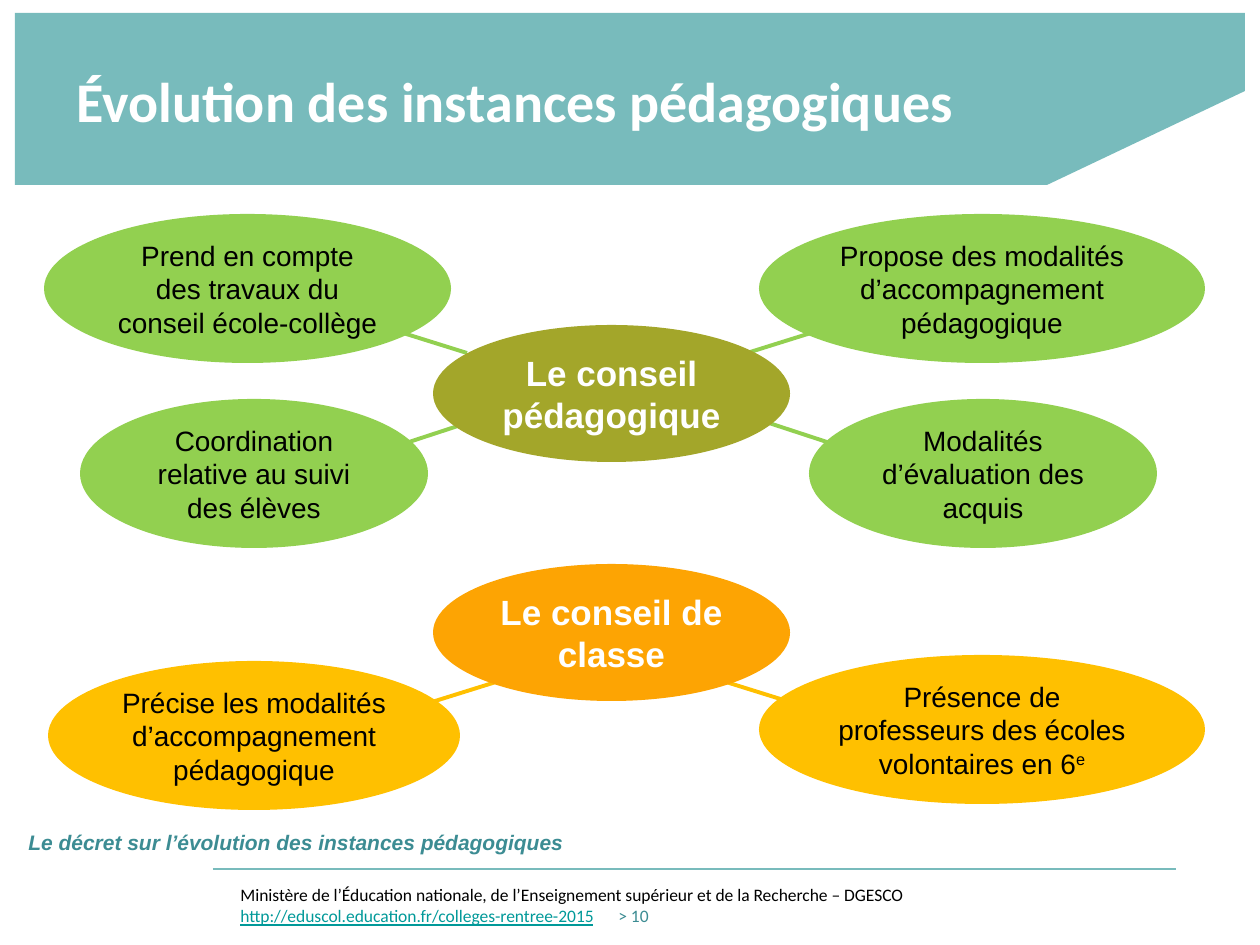
from lxml.etree import SubElement
from pptx import Presentation
from pptx.dml.color import RGBColor
from pptx.enum.shapes import MSO_CONNECTOR, MSO_SHAPE
from pptx.enum.text import MSO_ANCHOR, PP_ALIGN
from pptx.oxml.ns import qn
from pptx.util import Emu, Pt

SCALE = 914400 / 126


def px(*lengths):
    return [Emu(round(length * SCALE)) for length in lengths]


def color(value):
    return RGBColor.from_string(value)


presentation = Presentation()
presentation.slide_width, presentation.slide_height = px(1260, 945)
slide = presentation.slides.add_slide(presentation.slide_layouts[6])
shapes = slide.shapes

builder = shapes.build_freeform(1245, 13, scale=SCALE)
builder.add_line_segments([(15, 13), (15, 185), (1047, 185), (1245, 91)], close=True)
banner = builder.convert_to_shape()
banner.shadow.inherit = False
banner.fill.solid()
banner.fill.fore_color.rgb = color("78BBBC")
banner.line.fill.background()

lines = [
    (213, 869, 1176, 869, "78BBBC", 0.75),
    (790, 702, 726, 682, "FFC000", 2.25),
    (432, 702, 496, 682, "FFC000", 2.25),
    (467, 353, 403, 333, "92D050", 2.25),
    (403, 444, 467, 423, "92D050", 2.25),
    (747, 353, 811, 333, "92D050", 2.25),
    (833, 444, 769, 423, "92D050", 2.25),
]
for *ends, line_color, width in lines:
    connector = shapes.add_connector(MSO_CONNECTOR.STRAIGHT, *px(*ends))
    connector.line.color.rgb = color(line_color)
    connector.line.width = Pt(width)
    SubElement(connector._element.spPr, qn("a:effectLst"))

captions = [
    ((64, 16, 1133, 169), "Évolution des instances pédagogiques", "Calibri", 32, "FFFFFF", False, True),
    ((16, 823, 567, 38), "Le décret sur l’évolution des instances pédagogiques", "Arial", 12, "3C8C93", True, False),
]
for box, text, font_name, size, text_color, italic, wrap in captions:
    caption = shapes.add_textbox(*px(*box))
    caption.text_frame.word_wrap = wrap
    caption.text_frame.vertical_anchor = MSO_ANCHOR.MIDDLE
    paragraph = caption.text_frame.paragraphs[0]
    paragraph.text = text
    paragraph.font.name = font_name
    paragraph.font.size = Pt(size)
    paragraph.font.bold = True
    paragraph.font.italic = italic
    paragraph.font.color.rgb = color(text_color)

footer = shapes.add_textbox(*px(228, 878, 978, 67)).text_frame
footer.word_wrap = True
ministry = footer.paragraphs[0]
ministry.text = "Ministère de l’Éducation nationale, de l’Enseignement supérieur et de la Recherche – DGESCO"
address = footer.add_paragraph()
tabs = SubElement(address._p.get_or_add_pPr(), qn("a:tabLst"))
SubElement(tabs, qn("a:tab"), pos=str(px(378)[0]), algn="l")
for text, run_color, underline in [
    ("http://eduscol.education.fr/colleges-rentree-2015", "009999", True),
    ("\t> 10", "3C8C93", False),
]:
    run = address.add_run()
    run.text = text
    run.font.color.rgb = color(run_color)
    run.font.underline = underline
for paragraph in footer.paragraphs:
    paragraph.font.name = "Calibri"
    paragraph.font.size = Pt(10)
ministry.font.color.rgb = color("000000")

councils = [
    (433, 325, 357, 137, "A3A62A", "Le conseil pédagogique", ""),
    (433, 564, 357, 137, "FDA403", "Le conseil de classe", ""),
]
roles = [
    (759, 214, 446, 149, "92D050", "Propose des modalités d’accompagnement pédagogique", ""),
    (80, 399, 348, 149, "92D050", "Coordination relative au suivi des élèves", ""),
    (44, 214, 407, 149, "92D050", "Prend en compte des travaux du conseil école-collège", ""),
    (809, 399, 348, 149, "92D050", "Modalités d’évaluation des acquis", ""),
    (759, 655, 446, 149, "FFC000", "Présence de professeurs des écoles volontaires en 6", "e"),
    (48, 661, 412, 149, "FFC000", "Précise les modalités d’accompagnement pédagogique", ""),
]
for group, size, text_color, bold, margin in [
    (councils, 20, "FFFFFF", True, 10),
    (roles, 16, "000000", False, 13),
]:
    for *box, fill_color, text, superscript in group:
        ellipse = shapes.add_shape(MSO_SHAPE.OVAL, *px(*box))
        ellipse.shadow.inherit = False
        ellipse.fill.solid()
        ellipse.fill.fore_color.rgb = color(fill_color)
        ellipse.line.fill.background()
        frame = ellipse.text_frame
        frame.word_wrap = True
        frame.vertical_anchor = MSO_ANCHOR.MIDDLE
        frame.margin_left, frame.margin_right = px(margin, margin)
        paragraph = frame.paragraphs[0]
        paragraph.text = text
        if superscript:
            run = paragraph.add_run()
            run.text = superscript
            run.font._element.set("baseline", "30000")
        paragraph.alignment = PP_ALIGN.CENTER
        paragraph.font.name = "Arial"
        paragraph.font.size = Pt(size)
        paragraph.font.bold = bold
        paragraph.font.color.rgb = color(text_color)

presentation.save("out.pptx")
